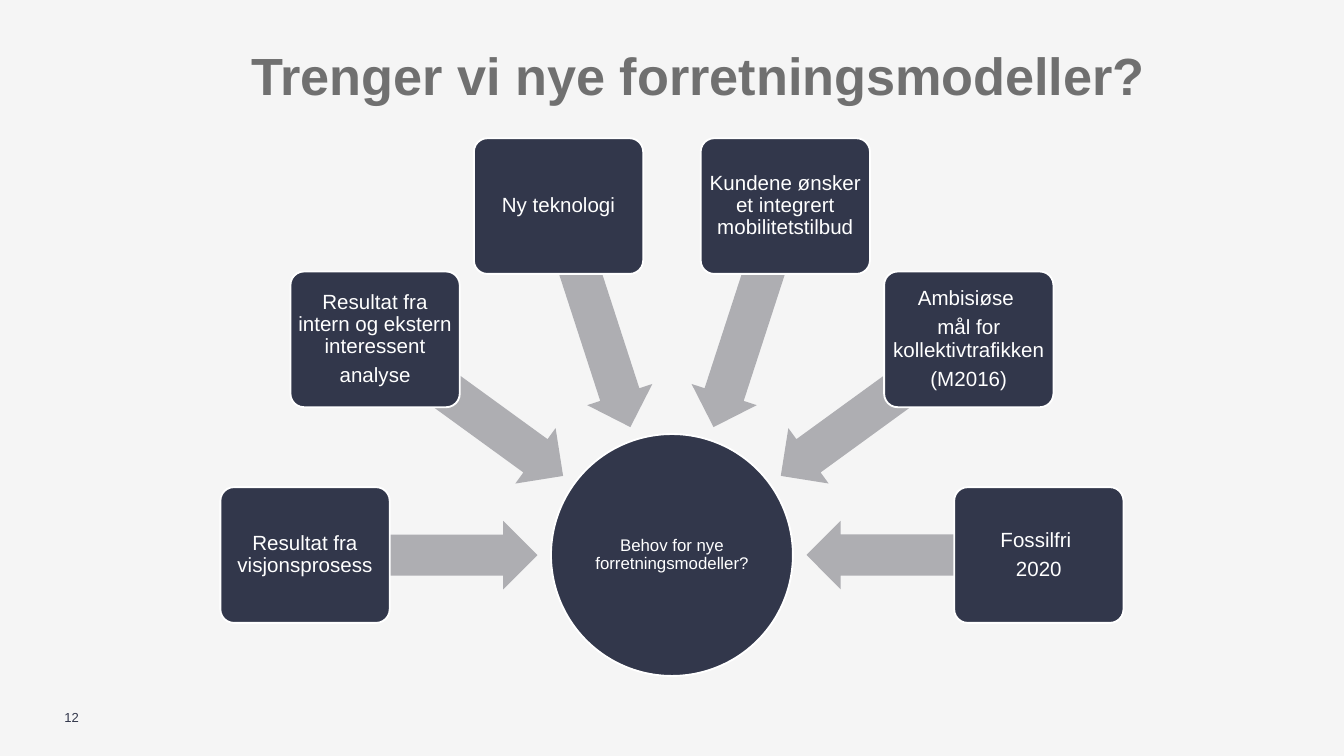
"""Build a slide with six drivers fanned around one central need."""
from math import cos, radians, sin

from pptx import Presentation
from pptx.dml.color import RGBColor
from pptx.enum.shapes import MSO_SHAPE
from pptx.enum.text import MSO_ANCHOR, PP_ALIGN
from pptx.util import Inches, Pt

TITLE = "Trenger vi nye forretningsmodeller?"
PAGE = "12"
HUB = ["Behov for nye forretningsmodeller?"]
DRIVERS = [
    ["Resultat fra visjonsprosess"],
    ["Resultat fra intern og ekstern interessent", "analyse"],
    ["Ny teknologi"],
    ["Kundene ønsker et integrert mobilitetstilbud"],
    ["Ambisiøse ", "mål for kollektivtrafikken", "(M2016)"],
    ["Fossilfri ", "2020"],
]

HEX = {"back": "F5F5F5", "navy": "32374B", "gray": "AEAEB2",
       "head": "707070", "white": "FFFFFF"}
WIDE = 10
HIGH = WIDE * 9 / 16
COL, ROW = WIDE / 100, HIGH / 100
MID = (50 * COL, 73.42 * ROW)
FAN, REACH = 27.3 * COL, 18.66 * COL
DISC = (18 * COL, 18 * COL)
BOX = (12.6 * COL, 10.1 * COL)
ARROW = (17.3 * COL, 5.1 * COL)
STEP = 180 / (len(DRIVERS) - 1)
GAP = 0.35
CENTER = {"alignment": PP_ALIGN.CENTER}
BODY = {**CENTER, "line_spacing": 0.9}


def color(name):
    return RGBColor.from_string(HEX[name])


def assign(target, values):
    for key, value in values.items():
        setattr(target, key, value)


def write(shape, lines, size, ink, inset=0, bold=False, form=None, gap=0):
    frame = shape.text_frame
    sides = ("left", "right", "top", "bottom")
    assign(frame, {f"margin_{side}": Inches(inset) for side in sides})
    assign(frame, {"word_wrap": True, "vertical_anchor": MSO_ANCHOR.MIDDLE})
    for i, line in enumerate(lines):
        para = frame.add_paragraph() if i else frame.paragraphs[0]
        assign(para, {**(form or {}), "space_after": Pt(size * gap)})
        run = para.add_run()
        run.text = line
        assign(run.font, {"name": "Arial", "size": Pt(size), "bold": bold})
        run.font.color.rgb = color(ink)


def label(slide, left, top, wide, high, *args, **kind):
    area = (left * COL, top * ROW, wide * COL, high * ROW)
    write(slide.shapes.add_textbox(*map(Inches, area)), *args, **kind)


def polar(angle, dist):
    turn = radians(angle)
    return MID[0] + dist * cos(turn), MID[1] + dist * sin(turn)


def draw(slide, kind, spot, size, fill, edge=True):
    area = (spot[0] - size[0] / 2, spot[1] - size[1] / 2, *size)
    shape = slide.shapes.add_shape(kind, *map(Inches, area))
    shape.shadow.inherit = False
    shape.fill.solid()
    shape.fill.fore_color.rgb = color(fill)
    if edge:
        shape.line.color.rgb = color("white")
        shape.line.width = Pt(1)
    else:
        shape.line.fill.background()
    return shape


def main():
    deck = Presentation()
    assign(deck, {"slide_width": Inches(WIDE), "slide_height": Inches(HIGH)})
    slide = deck.slides.add_slide(deck.slide_layouts[6])
    slide.background.fill.solid()
    slide.background.fill.fore_color.rgb = color("back")

    label(slide, 8.3, 5.65, 87.3, 8.36, [TITLE], 28, "head",
          bold=True, form=CENTER)
    label(slide, 4.8, 93.85, 1.6, 2.13, [PAGE], 7, "navy")

    hub = draw(slide, MSO_SHAPE.OVAL, MID, DISC, "navy")
    write(hub, HUB, 9, "white", inset=0.01, form=BODY, gap=GAP)
    for i, lines in enumerate(DRIVERS):
        angle = 180 + i * STEP
        arrow = draw(slide, MSO_SHAPE.LEFT_ARROW, polar(angle, REACH),
                     ARROW, "gray", edge=False)
        arrow.rotation = angle % 360
        arrow.adjustments[0] = 0.6
        box = draw(slide, MSO_SHAPE.ROUNDED_RECTANGLE, polar(angle, FAN),
                   BOX, "navy")
        box.adjustments[0] = 0.1
        write(box, lines, 11, "white", inset=0.02, form=BODY, gap=GAP)
    deck.save("out.pptx")


if __name__ == "__main__":
    main()
